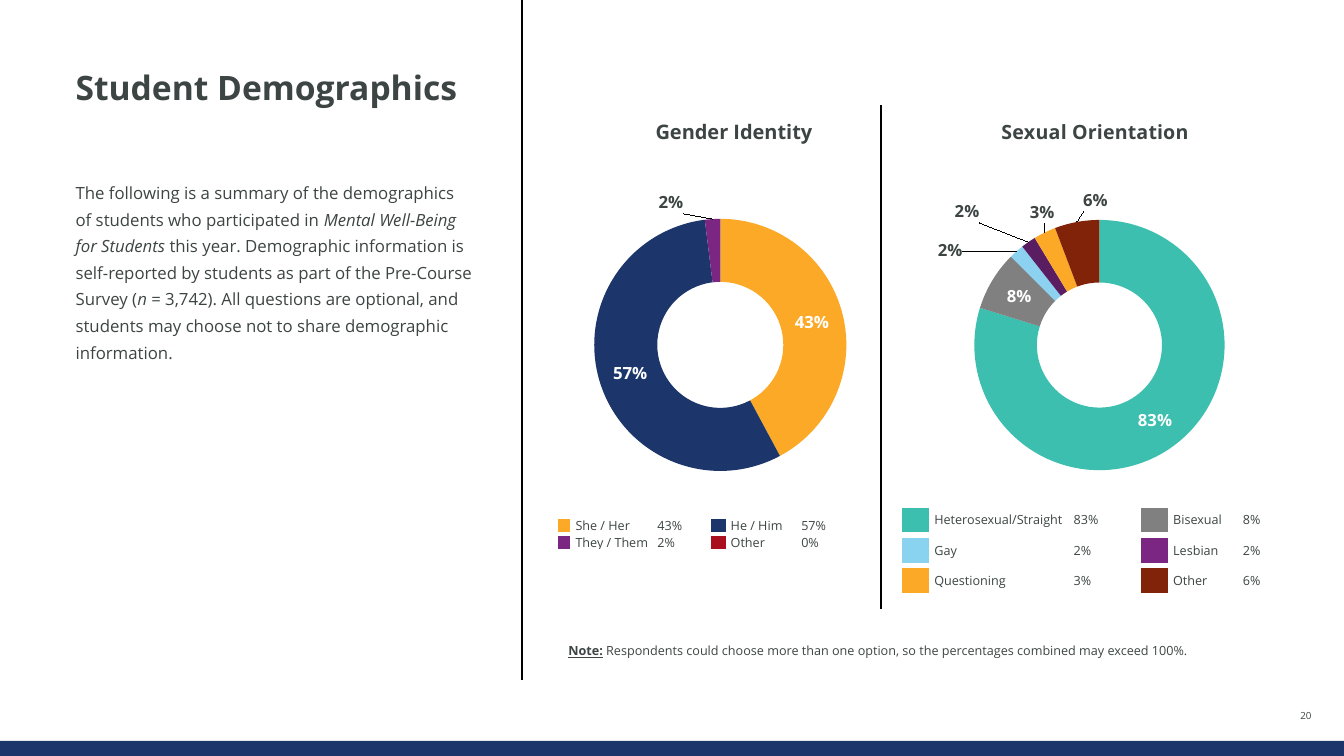
from lxml.etree import SubElement
from pptx import Presentation
from pptx.chart.data import CategoryChartData
from pptx.dml.color import RGBColor
from pptx.enum.chart import XL_CHART_TYPE as ChartType
from pptx.enum.shapes import MSO_CONNECTOR as Connector, MSO_SHAPE as Shape
from pptx.enum.text import MSO_ANCHOR as Anchor, MSO_AUTO_SIZE as AutoSize, PP_ALIGN as Align
from pptx.oxml import parse_xml
from pptx.oxml.ns import nsdecls, qn
from pptx.util import Pt

FONT = "Open Sans"
NO_GRID_STYLE = "{2D5ABB26-0587-4C30-8999-92F81FD0307C}"
TEXT = RGBColor(0x3C, 0x45, 0x43)
BLACK = RGBColor(0x00, 0x00, 0x00)
WHITE = RGBColor(0xFF, 0xFF, 0xFF)
NAVY = RGBColor(0x1C, 0x36, 0x6B)
AMBER = RGBColor(0xFB, 0xA9, 0x27)
PURPLE = RGBColor(0x7B, 0x26, 0x82)
PLUM = RGBColor(0x5B, 0x1D, 0x62)
RED = RGBColor(0xA9, 0x0F, 0x1C)
TEAL = RGBColor(0x3C, 0xBF, 0xAE)
GRAY = RGBColor(0x80, 0x80, 0x80)
SKY = RGBColor(0x8C, 0xD2, 0xF0)
PALE_SKY = RGBColor(0x8A, 0xD3, 0xF0)
BROWN = RGBColor(0x81, 0x23, 0x09)


def style_font(font, size, color=TEXT, bold=False):
    font.name, font.size, font.bold = FONT, Pt(size), bold
    font.color.rgb = color


def place(shape, left, top, width, height):
    shape.left, shape.top, shape.width, shape.height = map(Pt, (left, top, width, height))


def set_margins(target, left=0):
    target.margin_left = Pt(left)
    target.margin_top = target.margin_right = target.margin_bottom = 0


def write_runs(paragraph, size, pieces):
    """Write (text, emphasis) pieces; emphasis is a tuple of font attributes to switch on."""
    for text, emphasis in pieces:
        run = paragraph.add_run()
        run.text = text
        style_font(run.font, size)
        for attribute in emphasis:
            setattr(run.font, attribute, True)


def fill_placeholder(holder, box, size, spacing, pieces):
    place(holder, *box)
    frame = holder.text_frame
    set_margins(frame)
    frame.auto_size, frame.word_wrap, frame.vertical_anchor = AutoSize.NONE, True, Anchor.TOP
    paragraph = frame.paragraphs[0]
    properties = paragraph._p.get_or_add_pPr()
    properties.set("marL", "0")
    properties.set("indent", "0")
    SubElement(properties, qn("a:buNone"))
    paragraph.alignment, paragraph.line_spacing, paragraph.space_before = Align.LEFT, spacing, Pt(0)
    write_runs(paragraph, size, pieces)


def add_text(slide, box, size, pieces):
    frame = slide.shapes.add_textbox(*map(Pt, box)).text_frame
    frame.word_wrap = True
    write_runs(frame.paragraphs[0], size, pieces)
    return frame


def add_divider(slide, x, top, bottom):
    divider = slide.shapes.add_connector(Connector.STRAIGHT, Pt(x), Pt(top), Pt(x), Pt(bottom))
    divider.line.color.rgb, divider.line.width = BLACK, Pt(1)
    SubElement(divider._element.spPr, qn("a:effectLst"))


def add_footer_band(slide):
    band = slide.shapes.add_shape(Shape.RECTANGLE, 0, Pt(529.2), Pt(960), Pt(10.8))
    band.shadow.inherit = False
    band.fill.solid()
    band.fill.fore_color.rgb = NAVY
    band.line.fill.background()


def set_layout(parent, index, x, y, size=None, mode=None):
    """Give a chart part a manual layout in fractions of the chart."""
    old = parent.find(qn("c:layout"))
    if old is not None:
        parent.remove(old)
    layout = parse_xml(f"<c:layout {nsdecls('c')}><c:manualLayout/></c:layout>")
    values = []
    if size:
        values.append(("layoutTarget", "inner"))
    if mode:
        values += [("xMode", mode), ("yMode", mode)]
    values += [("x", x), ("y", y)]
    if size:
        values += zip("wh", size)
    for tag, value in values:
        SubElement(layout[0], qn(f"c:{tag}")).set("val", str(value))
    parent.insert(index, layout)


def add_doughnut(slide, left, title, title_size, title_x, label_size, plot, slices):
    """Slices are (value, color, offset); an offset moves the label outside the ring."""
    data = CategoryChartData(number_format="0%")
    data.categories = [str(n + 1) for n in range(len(slices))]
    data.add_series("Series 1", [value for value, _, _ in slices])
    chart = slide.shapes.add_chart(
        ChartType.DOUGHNUT, Pt(left), Pt(74.9), Pt(230.4), Pt(288), data).chart
    style_font(chart.font, 12)
    chart.has_legend = False
    heading = chart.chart_title.text_frame
    heading.text = title
    style_font(heading.paragraphs[0].runs[0].font, title_size, bold=True)
    set_layout(chart.chart_title._element, 1, title_x, 0.02, mode="edge")
    x, y, width, height = plot
    plot_area = chart._chartSpace.chart.plotArea
    set_layout(plot_area, 0, x, y, (width, height), "edge")
    chart.plots[0].vary_by_categories = True
    series = chart.plots[0].series[0]
    labels = series.data_labels
    labels.show_value = True
    labels.number_format, labels.number_format_is_linked = "0%", False
    style_font(labels.font, label_size, bold=True)
    for index, (value, color, offset) in enumerate(slices):
        point = series.points[index]
        point.format.fill.solid()
        point.format.fill.fore_color.rgb = color
        point.format.line.fill.background()
        if value is None:
            continue
        style_font(point.data_label.font, label_size, TEXT if offset else WHITE, True)
        if offset:
            label = labels._element.findall(qn("c:dLbl"))[-1]
            set_layout(label, 1, *offset)


def add_borders(cell, width):
    properties = cell._tc.get_or_add_tcPr()
    for side in ("lnT", "lnB"):
        properties.append(parse_xml(
            f'<a:{side} {nsdecls("a")} w="{Pt(width)}"><a:solidFill>'
            f'<a:srgbClr val="{WHITE}"/></a:solidFill></a:{side}>'))


def add_legend(slide, left, top, widths, row_height, border, border_all, indents, rows):
    """Each row holds (color, name, share) entries, three columns apiece."""
    table = slide.shapes.add_table(len(rows), len(widths), Pt(left), Pt(top), Pt(sum(widths)),
                                   Pt(row_height * len(rows))).table
    table.first_row = table.horz_banding = False
    table._tbl.tblPr.find(qn("a:tableStyleId")).text = NO_GRID_STYLE
    for column, width in zip(table.columns, widths):
        column.width = Pt(width)
    for r, entries in enumerate(rows):
        table.rows[r].height = Pt(row_height)
        for c, content in enumerate(part for entry in entries for part in entry):
            cell = table.cell(r, c)
            is_swatch = c % 3 == 0
            set_margins(cell, indents[c])
            cell.vertical_anchor = Anchor.MIDDLE
            if border_all or is_swatch:
                add_borders(cell, border)
            paragraph = cell.text_frame.paragraphs[0]
            if is_swatch:
                cell.fill.solid()
                cell.fill.fore_color.rgb = content
                SubElement(paragraph._p, qn("a:endParaRPr")).set("sz", "600")
            else:
                cell.fill.background()
                write_runs(paragraph, 9, [(content, ())])


def main():
    deck = Presentation()
    deck.slide_width, deck.slide_height = Pt(960), Pt(540)
    slide = deck.slides.add_slide(deck.slide_layouts[1])
    add_footer_band(slide)
    add_divider(slide, 373, 0, 486)
    fill_placeholder(slide.shapes.title, (54, 51.1, 283.7, 50.4), 24, 0.9,
                     [("Student Demographics", ("bold",))])
    fill_placeholder(slide.placeholders[1], (54, 126, 283.7, 152), 12, 1.32, [
        ("The following is a summary of the demographics of students who participated in ", ()),
        ("Mental Well-Being for Students", ("italic",)),
        (" this year. Demographic information is self-reported by students as part of the "
         "Pre-Course Survey (", ()),
        ("n", ("italic",)),
        (" = 3,742). All questions are optional, and students may choose not to share "
         "demographic information.", ())])
    page_number = add_text(slide, (914.4, 504.7, 36.7, 10.8), 7, [("20", ())])
    set_margins(page_number)
    page_number.vertical_anchor = Anchor.BOTTOM
    page_number.paragraphs[0].alignment = Align.CENTER
    add_divider(slide, 629.3, 74.9, 434.9)

    add_doughnut(slide, 398.9, "Gender Identity", 14.3, 0.29, 12, (0.111, 0.192, 0.782, 0.807), [
        (0.43, AMBER, None), (0.57, NAVY, None), (0.02, PURPLE, (-0.135, -0.12)),
        (None, RED, None)])
    add_legend(slide, 398.9, 369.4, (8.6, 59.8, 40.3, 10.8, 54, 33.1), 12.2, 3, True,
               (0, 3.6, 2.3, 0, 3.6, 0), [
                   [(AMBER, "She / Her", "43%"), (NAVY, "He / Him", "57%")],
                   [(PURPLE, "They / Them", "2%"), (RED, "Other", "0%")]])

    add_doughnut(slide, 667.4, "Sexual Orientation", 14, 0.197, 11.9, (0.124, 0.196, 0.776, 0.8), [
        (0.83, TEAL, None), (0.08, GRAY, None), (0.02, SKY, (-0.27, -0.06)),
        (0.02, PLUM, (-0.245, -0.14)), (0.03, AMBER, (-0.05, -0.12)),
        (0.06, BROWN, (0.04, -0.13))])
    add_legend(slide, 644.4, 360.7, (19.4, 100.8, 50.4, 19.4, 51.1, 41), 21.6, 4.5, False,
               (0, 3.6, 2.3, 0, 3.6, 2.3), [
                   [(TEAL, "Heterosexual/Straight", "83%"), (GRAY, "Bisexual", "8%")],
                   [(PALE_SKY, "Gay", "2%"), (PURPLE, "Lesbian", "2%")],
                   [(AMBER, "Questioning", "3%"), (BROWN, "Other", "6%")]])
    add_text(slide, (398.9, 455.8, 515.5, 18), 9, [
        ("Note:", ("bold", "underline")),
        (" Respondents could choose more than one option, so the percentages combined may "
         "exceed 100%.", ())])
    deck.save("out.pptx")


if __name__ == "__main__":
    main()
